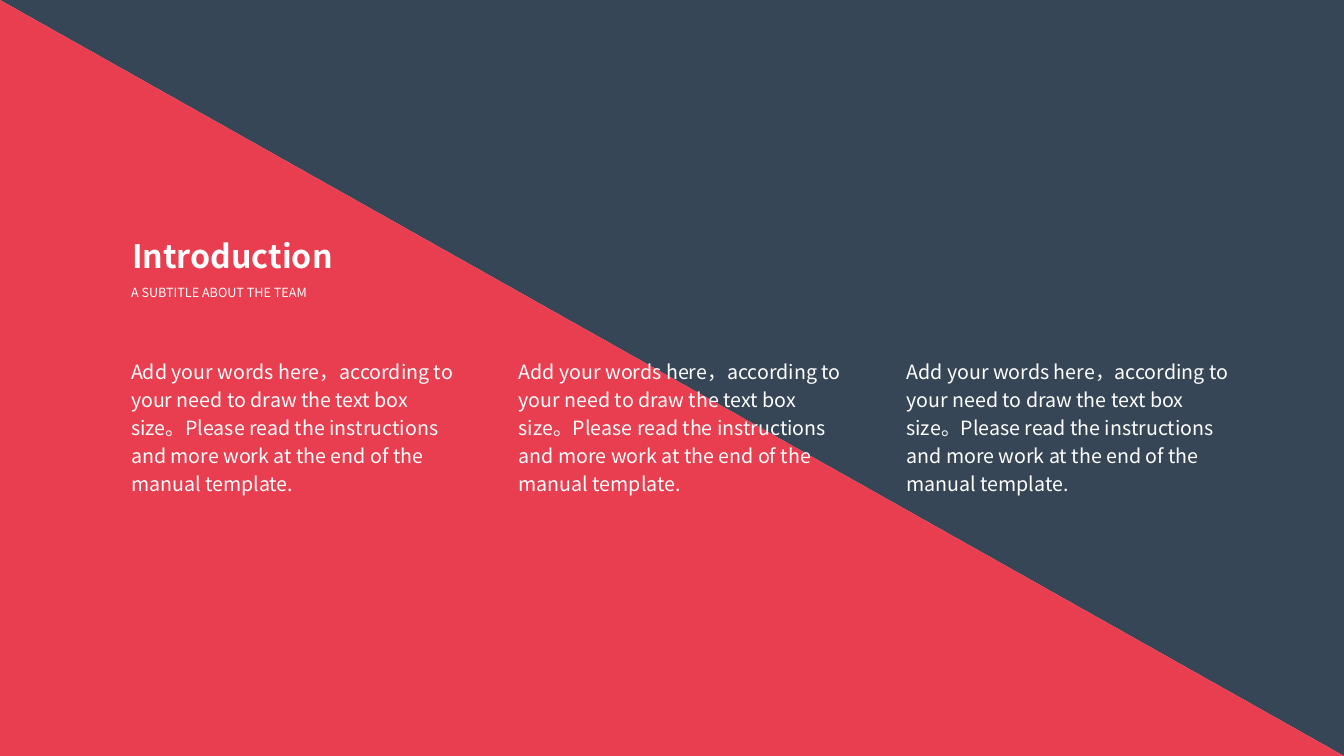
from dataclasses import dataclass

from lxml.etree import SubElement
from pptx import Presentation
from pptx.dml.color import RGBColor
from pptx.enum.shapes import MSO_SHAPE
from pptx.enum.text import MSO_ANCHOR, PP_ALIGN
from pptx.oxml.ns import qn
from pptx.shapes.autoshape import Shape
from pptx.slide import Slide
from pptx.util import Inches, Pt

NAVY = RGBColor(0x37, 0x46, 0x56)
RED = RGBColor(0xE8, 0x3E, 0x50)
WHITE = RGBColor(0xFF, 0xFF, 0xFF)
FONT = "Noto Sans CJK JP"
WIDTH, HEIGHT = 13.33, 7.5
COLUMNS = 3
FIRST_LEFT, LAST_LEFT = 1.3, 8.99
COLUMN_STEP = (LAST_LEFT - FIRST_LEFT) / (COLUMNS - 1)
BODY = (
    "Add your words here，according to your need to draw the text box size。"
    "Please read the instructions and more work at the end of the manual template."
)


@dataclass(frozen=True)
class Triangle:
    color: RGBColor
    rotation: float


@dataclass(frozen=True)
class Area:
    left: float
    top: float
    width: float
    height: float


def add_triangle(page: Slide, triangle: Triangle) -> None:
    shape = page.shapes.add_shape(
        MSO_SHAPE.RIGHT_TRIANGLE, 0, 0, Inches(WIDTH), Inches(HEIGHT)
    )
    shape.rotation = triangle.rotation
    shape.shadow.inherit = False
    shape.fill.solid()
    shape.fill.fore_color.rgb = triangle.color
    shape.line.fill.background()


def add_text_box(page: Slide, area: Area) -> Shape:
    return page.shapes.add_textbox(
        Inches(area.left), Inches(area.top), Inches(area.width), Inches(area.height)
    )


def add_heading_outline(page: Slide, area: Area) -> Shape:
    left, top = Inches(area.left), Inches(area.top)
    right, bottom = left + Inches(area.width), top + Inches(area.height)
    builder = page.shapes.build_freeform(left, top)
    builder.add_line_segments([(right, top), (right, bottom), (left, bottom)])
    outline = builder.convert_to_shape()
    outline.shadow.inherit = False
    outline.fill.background()
    outline.line.fill.background()
    return outline


def write_text(
    box: Shape,
    text: str,
    *,
    size: float,
    bold: bool = False,
    anchor: MSO_ANCHOR = MSO_ANCHOR.TOP,
    align: PP_ALIGN = PP_ALIGN.LEFT,
    line_spacing: float = 1.0,
    space_before: float = 0,
) -> None:
    frame = box.text_frame
    frame.word_wrap = True
    frame.vertical_anchor = anchor
    frame.margin_left = frame.margin_right = 0
    frame.margin_top = frame.margin_bottom = 0
    para = frame.paragraphs[0]
    para.alignment = align
    para.line_spacing = line_spacing
    para.space_before = Pt(space_before)
    span = para.add_run()
    span.text = text
    span.font.size = Pt(size)
    span.font.bold = bold
    span.font.name = FONT
    span.font.color.rgb = WHITE
    east_asian = SubElement(span.font._element, qn("a:ea"))
    east_asian.set("typeface", FONT)


def main() -> None:
    deck = Presentation()
    deck.slide_width = Inches(WIDTH)
    deck.slide_height = Inches(HEIGHT)
    page = deck.slides.add_slide(deck.slide_layouts[6])

    for triangle in (Triangle(NAVY, 180), Triangle(RED, 0)):
        add_triangle(page, triangle)

    write_text(
        add_heading_outline(page, Area(1.31, 2.33, 3.84, 0.41)),
        "Introduction",
        size=23,
        bold=True,
        anchor=MSO_ANCHOR.MIDDLE,
    )
    write_text(
        add_heading_outline(page, Area(FIRST_LEFT, 2.83, 2.08, 0.24)),
        "A SUBTITLE ABOUT THE TEAM",
        size=9,
        align=PP_ALIGN.JUSTIFY,
        space_before=8,
    )
    for column in range(COLUMNS):
        left = FIRST_LEFT + column * COLUMN_STEP
        write_text(
            add_text_box(page, Area(left, 3.52, 3.3, 1.41)),
            BODY,
            size=14,
            line_spacing=1.2,
            space_before=2.8,
        )

    deck.save("out.pptx")


if __name__ == "__main__":
    main()
